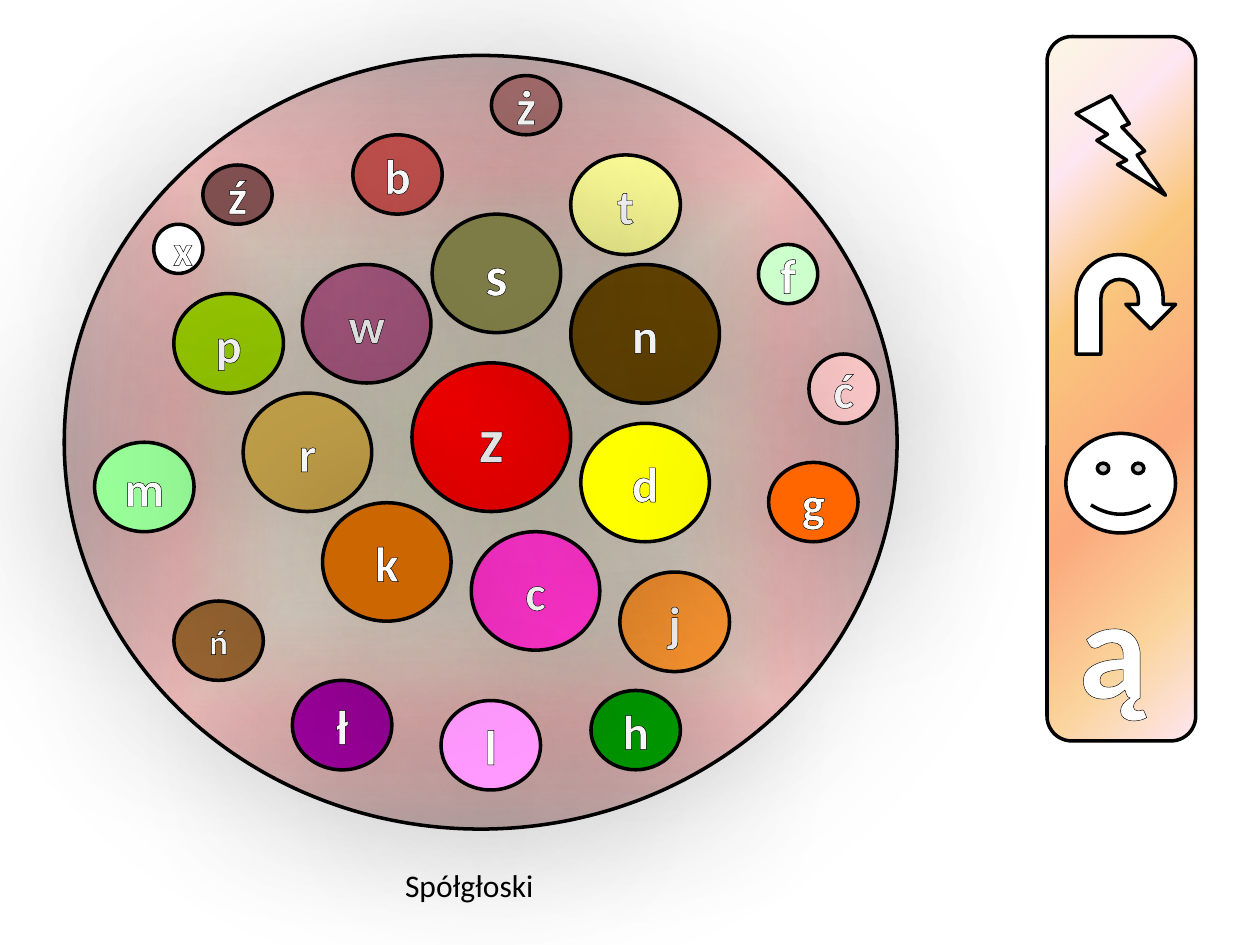
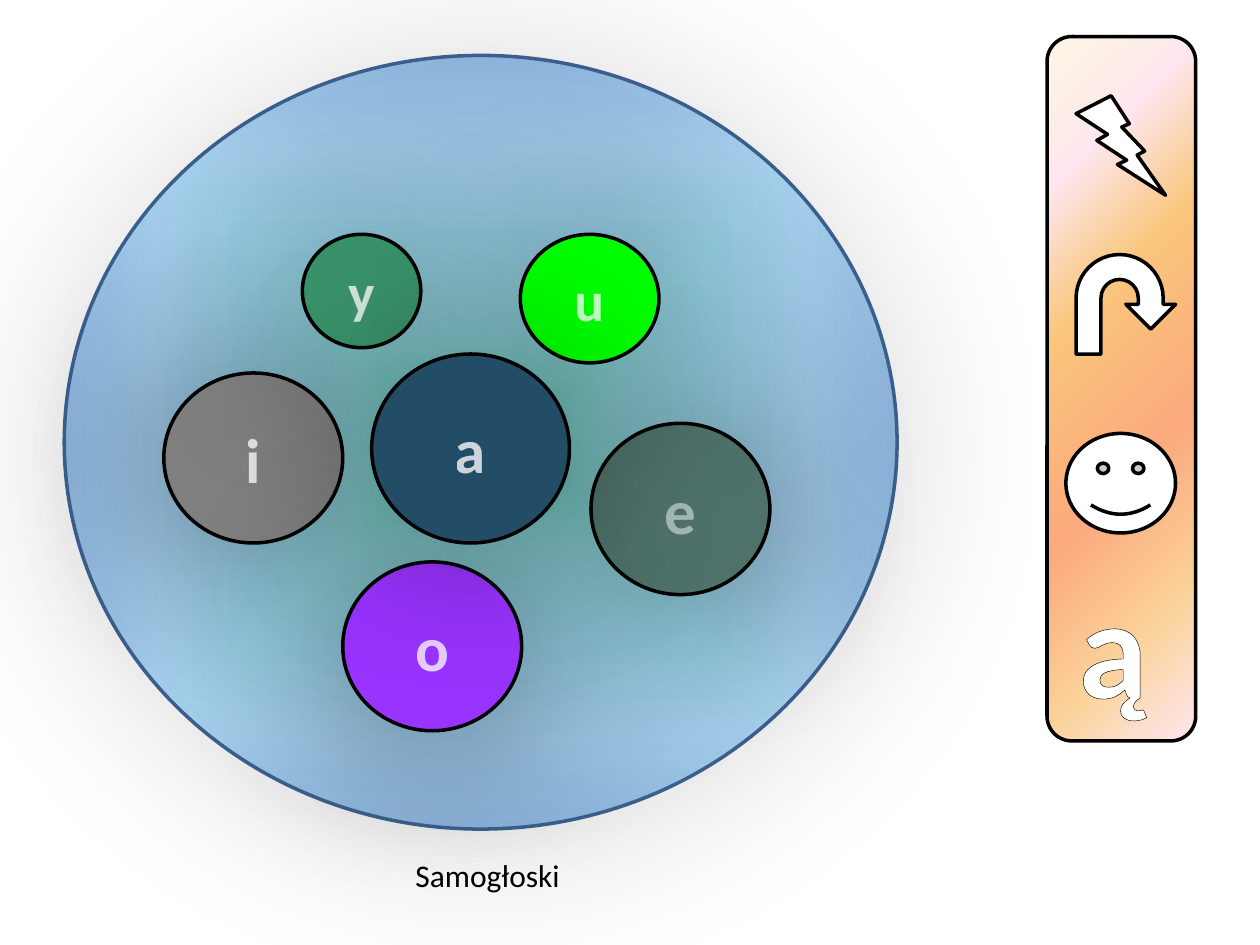
"""Build two slides that sort Polish consonants and vowels into letter bubbles."""
from pptx import Presentation
from pptx.dml.color import RGBColor
from pptx.enum.shapes import MSO_SHAPE
from pptx.enum.text import MSO_ANCHOR, MSO_AUTO_SIZE, PP_ALIGN
from pptx.oxml import parse_xml
from pptx.oxml.ns import nsdecls, qn
from pptx.util import Inches, Pt

BLACK, WHITE = "000000", "FFFFFF"
NS = nsdecls("a")


def paint(tone, alpha=100):
    return f'<a:srgbClr {NS} val="{tone}"><a:alpha val="{alpha * 1000}"/></a:srgbClr>'


def draw(slide, kind, box, fill, edge=BLACK, glow=False, text="", size=28, rim=0, alpha=100):
    if kind:
        item = slide.shapes.add_shape(kind, *map(Inches, box))
        props = item._element.spPr
        item.fill.background()
        if isinstance(fill, str):
            xml = f"<a:solidFill {NS}>{paint(fill)}</a:solidFill>"
        else:
            stops, path = fill
            marks = "".join(f'<a:gs pos="{pos * 1000}">{paint(tone, part)}</a:gs>'
                            for pos, tone, part in stops)
            xml = f'<a:gradFill {NS} rotWithShape="1"><a:gsLst>{marks}</a:gsLst>{path}</a:gradFill>'
        props.replace(props.find(qn("a:noFill")), parse_xml(xml))
        item.line.color.rgb = RGBColor.from_string(edge)
        item.line.width = Pt(2)
        item.shadow.inherit = False
        if glow:
            props.find(qn("a:effectLst")).append(parse_xml(
                f'<a:outerShdw {NS} blurRad="{Pt(100)}" dist="{Pt(4)}" dir="5400000" '
                f'algn="t" rotWithShape="0">{paint(BLACK, 43)}</a:outerShdw>'))
    else:
        item = slide.shapes.add_textbox(*map(Inches, box))
    if text:
        frame = item.text_frame
        frame.word_wrap = True
        para = frame.paragraphs[0]
        if kind:
            frame.vertical_anchor = MSO_ANCHOR.MIDDLE
            para.alignment = PP_ALIGN.CENTER
        else:
            frame.auto_size = MSO_AUTO_SIZE.SHAPE_TO_FIT_TEXT
        run = para.add_run()
        run.text = text
        for key, value in {"name": "Calibri", "size": Pt(size), "bold": True}.items():
            setattr(run.font, key, value)
        look = run._r.get_or_add_rPr()
        look.insert(0, parse_xml(
            f'<a:ln {NS} w="{Pt(rim)}"><a:solidFill>{paint(BLACK, alpha)}</a:solidFill>'
            '<a:prstDash val="solid"/></a:ln>'))
        look.insert(1, parse_xml(f"<a:solidFill {NS}>{paint(WHITE, alpha)}</a:solidFill>"))


CORE = ('<a:path path="shape"><a:fillToRect l="50000" t="50000" r="50000" b="50000"/></a:path>')
SLANT = '<a:lin ang="2700000" scaled="0"/>'
WARM = [(0, "FFF200", 10), (45, "FF7A00", 10), (70, "FF0300", 20), (100, "4D0808", 30)]
COOL = [(0, "03D4A8", 0), (0, "03D4A8", 0), (0, "03D4A8", 20), (0, "03D4A8", 50),
        (25, "21D6E0", 40), (75, "0087E6", 30), (100, "005CBF", 40)]
PEACH = [(0, "FBEAC7", 37), (18, "FEE7F2", 100), (36, "FAC77D", 100),
         (61, "FBA97D", 100), (82, "FBD49C", 100), (100, "FEE7F2", 100)]
TOOLS = [
    (MSO_SHAPE.ROUNDED_RECTANGLE, (8.31, 0.29, 1.18, 5.59), (PEACH, SLANT)),
    (MSO_SHAPE.LIGHTNING_BOLT, (8.54, 0.76, 0.71, 0.79), WHITE),
    (MSO_SHAPE.U_TURN_ARROW, (8.54, 2.02, 0.79, 0.79), WHITE),
    (MSO_SHAPE.SMILEY_FACE, (8.46, 3.44, 0.87, 0.79), WHITE),
]
HARD = [
    ("w", (2.4, 2.1, 1.02, 0.94), "B05E87", 28, 1, 100),
    ("ń", (1.38, 4.77, 0.71, 0.63), "996633", 20, 1, 100),
    ("ż", (3.9, 0.6, 0.55, 0.47), "A46C6C", 28, 1, 100),
    ("j", (4.92, 4.54, 0.87, 0.79), "FF9933", 28, 1, 100),
    ("ć", (6.42, 2.81, 0.55, 0.55), "FFCCCC", 28, 1, 100),
    ("h", (4.69, 5.48, 0.71, 0.63), "009900", 28, 1, 100),
    ("t", (4.53, 1.23, 0.87, 0.79), "FFFF99", 28, 1, 100),
    ("z", (3.27, 2.88, 1.26, 1.18), "FF0000", 36, 1, 100),
    ("ł", (2.32, 5.4, 0.79, 0.71), "990099", 28, 1, 100),
    ("n", (4.53, 2.1, 1.18, 1.1), "624304", 28, 1, 100),
    ("b", (2.8, 1.07, 0.71, 0.63), "C0504D", 28, 1, 100),
    ("p", (1.38, 2.33, 0.87, 0.79), "99CC00", 28, 1, 100),
    ("s", (3.43, 1.7, 1.02, 0.94), "7D7C47", 32, 1, 100),
    ("c", (3.74, 4.22, 1.02, 0.94), "FF33CC", 28, 1, 100),
    ("m", (0.75, 3.51, 0.79, 0.71), "99FF99", 28, 1, 100),
    ("r", (1.93, 3.12, 1.02, 0.94), "C09E48", 28, 0.75, 100),
    ("l", (3.5, 5.56, 0.79, 0.71), "FF99FF", 28, 1, 100),
    ("d", (4.61, 3.36, 1.02, 0.94), "FFFF00", 28, 1, 100),
    ("k", (2.56, 3.99, 1.02, 0.94), "CC6600", 28, 1, 100),
    ("f", (6.02, 1.94, 0.47, 0.47), "CCFFCC", 28, 1, 100),
    ("g", (6.1, 3.67, 0.71, 0.63), "FF6600", 28, 1, 100),
    ("ź", (1.61, 1.31, 0.55, 0.47), "825050", 28, 1, 100),
    ("x", (1.22, 1.78, 0.39, 0.39), WHITE, 24, 1, 100),
]
SOFT = [
    ("i", (1.3, 2.96, 1.42, 1.35), "7F7F7F", 36, 1.25, 77),
    ("e", (4.69, 3.36, 1.42, 1.36), "4E7269", 36, 1.25, 50),
    ("y", (2.4, 1.86, 0.94, 0.9), "39936A", 32, 1.25, 77),
    ("o", (2.72, 4.46, 1.42, 1.34), "9933FF", 36, 1.25, 77),
    ("u", (4.13, 1.86, 1.1, 1.02), "00FF00", 32, 1.25, 77),
    ("a", (2.95, 2.81, 1.57, 1.5), "234D67", 36, 1.25, 77),
]
PAGES = [
    ("Spółgłoski", (3.11, 6.82, 1.23, 0.4), WARM, BLACK, HARD),
    ("Samogłoski", (3.19, 6.74, 1.36, 0.4), COOL, "3A5F8C", SOFT),
]

deck = Presentation()
deck.slide_width, deck.slide_height = Inches(10), Inches(7.5)
for name, spot, blend, edge, group in PAGES:
    slide = deck.slides.add_slide(deck.slide_layouts[5])
    title = slide.shapes.title
    title.left, title.top, title.width, title.height = map(Inches, spot)
    frame = title.text_frame
    frame.text = name
    for key, value in {"word_wrap": False, "vertical_anchor": MSO_ANCHOR.TOP,
                       "auto_size": MSO_AUTO_SIZE.SHAPE_TO_FIT_TEXT}.items():
        setattr(frame, key, value)
    para = frame.paragraphs[0]
    para.alignment = PP_ALIGN.CENTER
    font = para.runs[0].font
    for key, value in {"name": "Calibri", "size": Pt(18), "bold": False}.items():
        setattr(font, key, value)
    font.color.rgb = RGBColor.from_string(BLACK)

    draw(slide, MSO_SHAPE.OVAL, (0.51, 0.44, 6.61, 6.14), (blend, CORE), edge, True)
    for sign, box, tone, size, rim, alpha in group:
        draw(slide, MSO_SHAPE.OVAL, box, tone, glow=True, text=sign, size=size, rim=rim, alpha=alpha)
    for kind, box, fill in TOOLS:
        draw(slide, kind, box, fill)
    draw(slide, None, (8.46, 4.38, 1.02, 1.45), None, text="ą", size=80, rim=1.5)

deck.save("out.pptx")
